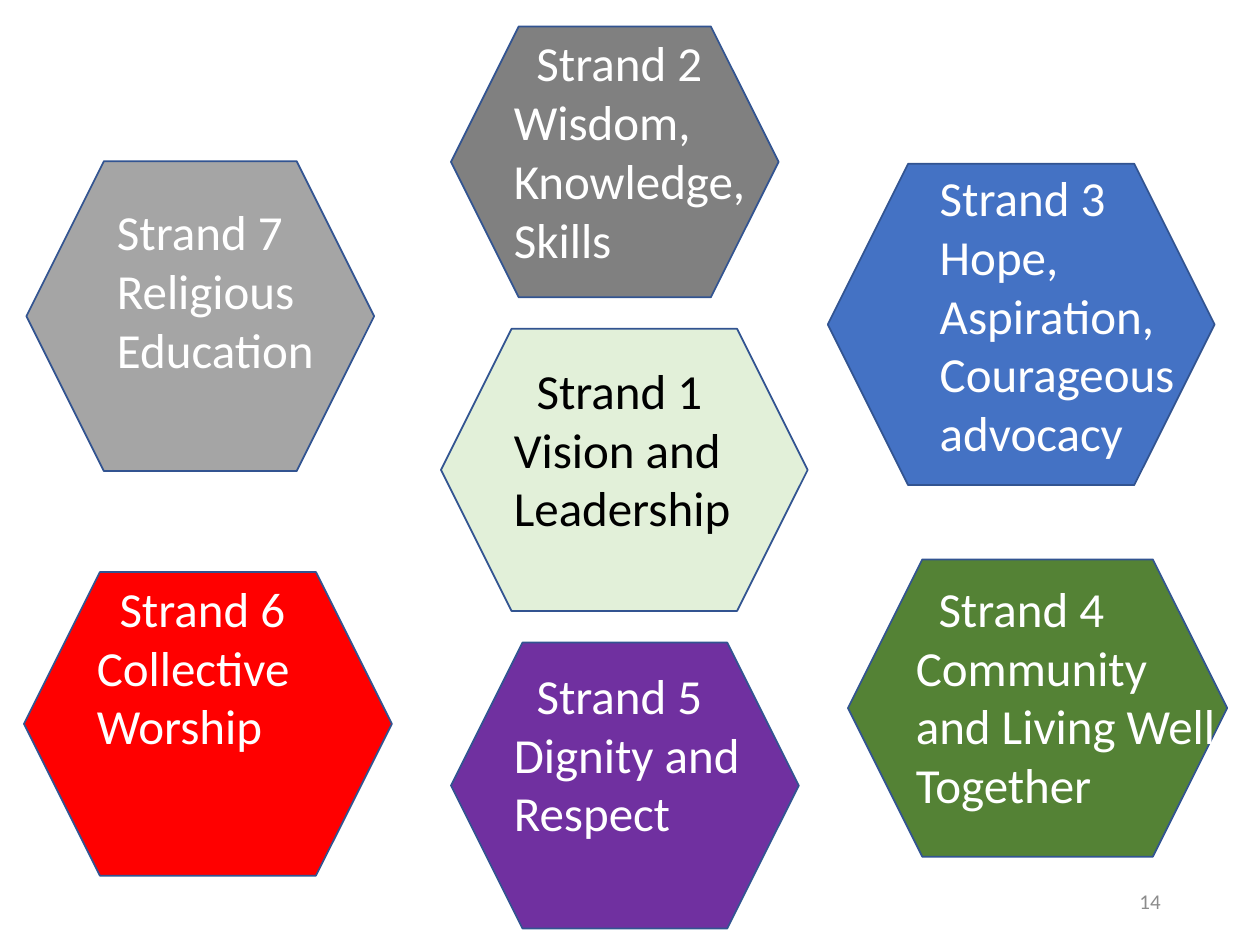
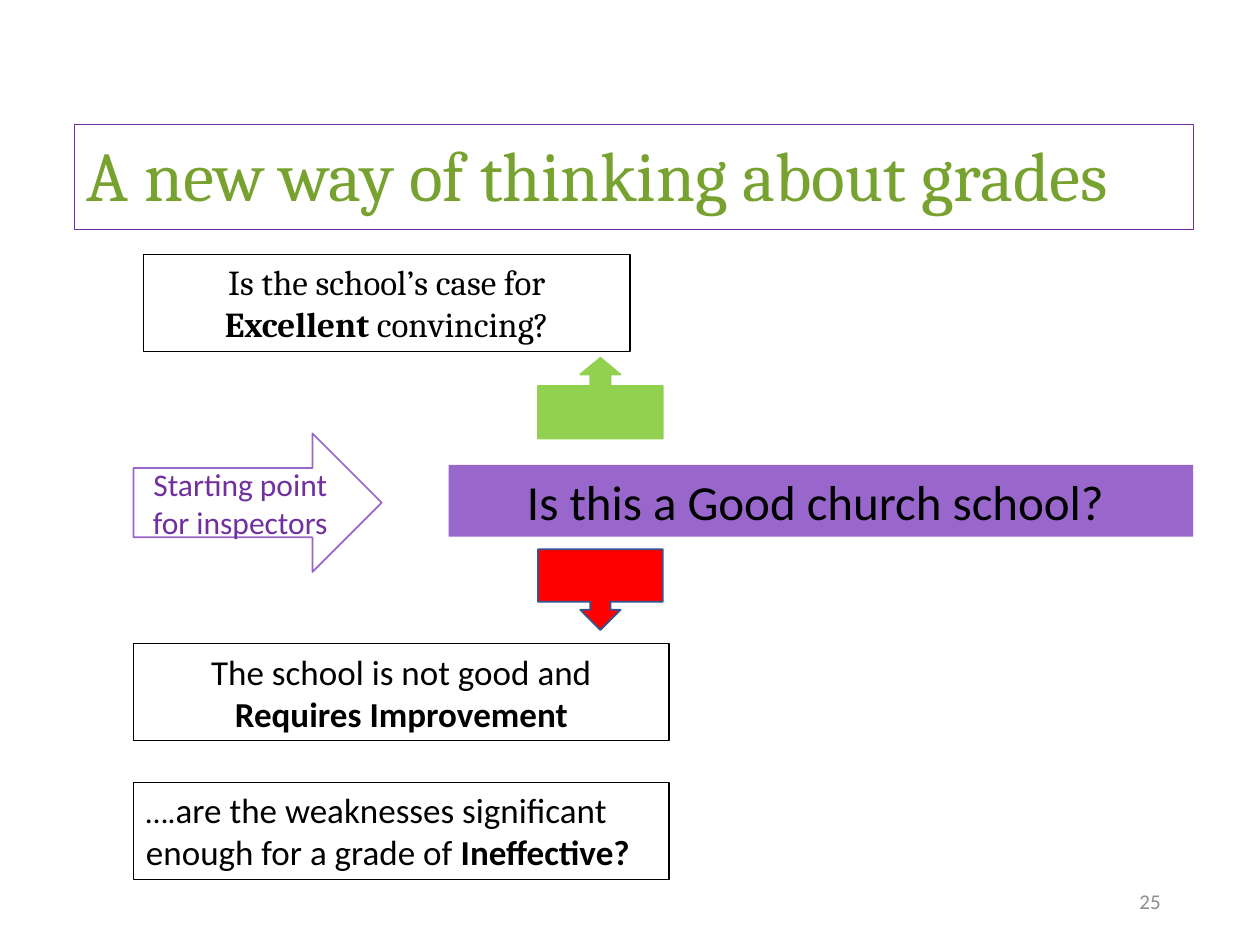
from pptx import Presentation
from pptx.dml.color import RGBColor
from pptx.enum.shapes import MSO_SHAPE
from pptx.enum.text import MSO_ANCHOR, MSO_AUTO_SIZE, PP_ALIGN
from pptx.util import Inches, Pt

COLS, ROWS = 100, 75
WIDTH, HEIGHT = Inches(10), Inches(7.5)
BLACK, WHITE, GREY = "000000", "FFFFFF", "8C8C8C"
NAVY, PURPLE, LILAC = "325491", "7030A0", "9966CC"
RED, LIME, OLIVE = "FF0000", "92D050", "78A22F"
LEFT, CENTER, RIGHT = PP_ALIGN.LEFT, PP_ALIGN.CENTER, PP_ALIGN.RIGHT
FIT = {"auto_size": MSO_AUTO_SIZE.SHAPE_TO_FIT_TEXT, "vertical_anchor": MSO_ANCHOR.TOP}
MIDDLE = {"vertical_anchor": MSO_ANCHOR.MIDDLE}
NUMBER_AT = (70.6, 69.5, 22.5, 4)

STRANDS = [
    ("Strand 1", "Vision and Leadership", "E2F0D9", BLACK, True,
     (35, 26.1, 29.1, 22.4), (39.8, 28.1, 20.5, 15.1)),
    ("Strand 2", "Wisdom, Knowledge, Skills", "808080", WHITE, True,
     (35.8, 2.1, 26, 21.5), (39.8, 2.1, 22, 19.9)),
    ("Strand 3", "Hope, Aspiration, Courageous advocacy", "4472C4", WHITE, False,
     (65.7, 13, 30.7, 25.5), (73.6, 12.8, 23.8, 24.6)),
    ("Strand 4", "Community and Living Well Together", "548235", WHITE, True,
     (67.3, 44.4, 30.1, 23.6), (71.7, 45.4, 25.8, 19.9)),
    ("Strand 5", "Dignity and Respect", PURPLE, WHITE, True,
     (35.8, 51, 27.6, 22.7), (39.8, 52.3, 20.5, 15.1)),
    ("Strand 6", "Collective Worship", RED, WHITE, True,
     (1.9, 45.4, 29.2, 24.1), (6.7, 45.4, 20.9, 15.1)),
    ("Strand 7", "Religious Education", "A5A5A5", WHITE, False,
     (2.1, 12.8, 27.6, 24.6), (8.3, 15.5, 18.1, 15.1)),
]


def rgb(color):
    return RGBColor.from_string(color)


def place(at):
    x, y, w, h = at
    return [int(v) for v in (WIDTH * x / COLS, HEIGHT * y / ROWS,
                             WIDTH * w / COLS, HEIGHT * h / ROWS)]


def assign(obj, values):
    for name, value in values.items():
        setattr(obj, name, value)


def paint(sp, fill=None, line=None, width=1):
    if fill:
        sp.fill.solid()
        sp.fill.fore_color.rgb = rgb(fill)
    else:
        sp.fill.background()
    if line:
        sp.line.color.rgb = rgb(line)
        sp.line.width = Pt(width)
    else:
        sp.line.fill.background()


def write(sp, paragraphs, size, color, font="Calibri", align=LEFT, frame=FIT):
    tf = sp.text_frame
    assign(tf, {"word_wrap": True, **frame})
    for i, runs in enumerate(paragraphs):
        p = tf.add_paragraph() if i else tf.paragraphs[0]
        p.alignment = align
        for text, *style in runs:
            r = p.add_run()
            r.text = text
            assign(r.font, {"size": Pt(size), "name": font, "bold": False,
                            **(style[0] if style else {})})
            r.font.color.rgb = rgb(color)
    return tf


def add_shape(s, kind, at, fill=None, line=None, width=1):
    sp = s.shapes.add_shape(kind, *place(at))
    sp.shadow.inherit = False
    paint(sp, fill, line, width)
    return sp


def add_label(s, at, *args, **kwargs):
    sp = s.shapes.add_textbox(*place(at))
    return write(sp, *args, **kwargs)


def add_box(s, at, runs, size=20, fill=None, line=BLACK, width=0.75, **kwargs):
    sp = add_shape(s, MSO_SHAPE.RECTANGLE, at, fill, line, width)
    write(sp, [runs], size, BLACK, **kwargs)


def add_number(s, number):
    add_label(s, NUMBER_AT, [[(number,)]], 12, GREY, align=RIGHT, frame=MIDDLE)


def add_title(s, at, text):
    sp = s.shapes.title
    assign(sp, dict(zip(("left", "top", "width", "height"), place(at))))
    paint(sp, None, PURPLE, 0.75)
    write(sp, [[(text,)]], 40, OLIVE, font="Cambria")


def add_strand(s, name, topic, fill, color, indented, hexagon, label):
    add_shape(s, MSO_SHAPE.HEXAGON, hexagon, fill, NAVY)
    tf = add_label(s, label, [[(name,)], [(topic,)]], 28, color)
    if indented:
        tf.paragraphs[0]._p.get_or_add_pPr().set("indent", str(Inches(0.18)))


def add_callout(s, top, fill, line, rotation=0, head=0.25):
    sp = add_shape(s, MSO_SHAPE.DOWN_ARROW_CALLOUT, (42.7, top, 9.9, 6.4), fill, line)
    sp.rotation = rotation
    sp.adjustments[2] = head


def build_strands(prs):
    s = prs.slides.add_slide(prs.slide_layouts[6])
    add_number(s, "14")
    for strand in STRANDS:
        add_strand(s, *strand)


def build_grades(prs):
    bold = {"bold": True}
    s = prs.slides.add_slide(prs.slide_layouts[5])
    add_number(s, "25")
    add_title(s, (5.9, 9.9, 88.8, 7.7), "A new way of thinking about grades")
    add_box(s, (35.6, 36.9, 59.1, 5.7), [("Is this a Good church school? ",)],
            28, LILAC, None, align=CENTER)
    start = add_shape(s, MSO_SHAPE.RIGHT_ARROW, (10.6, 34.4, 19.7, 11), WHITE, LILAC)
    write(start, [[("Starting point for inspectors",)]], 18, PURPLE,
          align=CENTER, frame=MIDDLE)
    add_callout(s, 28.4, LIME, LIME, 180, 0.207)
    add_callout(s, 43.6, RED, NAVY)
    add_box(s, (11.4, 20.2, 38.6, 7.7),
            [("Is the school’s case for ",), ("Excellent", bold), (" convincing?",)],
            fill=WHITE, width=1, font="Cambria", align=CENTER)
    add_box(s, (10.6, 51.1, 42.5, 7.7),
            [("The school is not good and ",), ("Requires Improvement", bold)],
            align=CENTER)
    add_box(s, (10.6, 62.1, 42.5, 7.7),
            [("….", {"size": Pt(18)}),
             ("are the weaknesses significant enough for a grade of ",),
             ("Ineffective?", bold)])


def main():
    prs = Presentation()
    assign(prs, {"slide_width": WIDTH, "slide_height": HEIGHT})
    build_strands(prs)
    build_grades(prs)
    prs.save("out.pptx")


if __name__ == "__main__":
    main()
